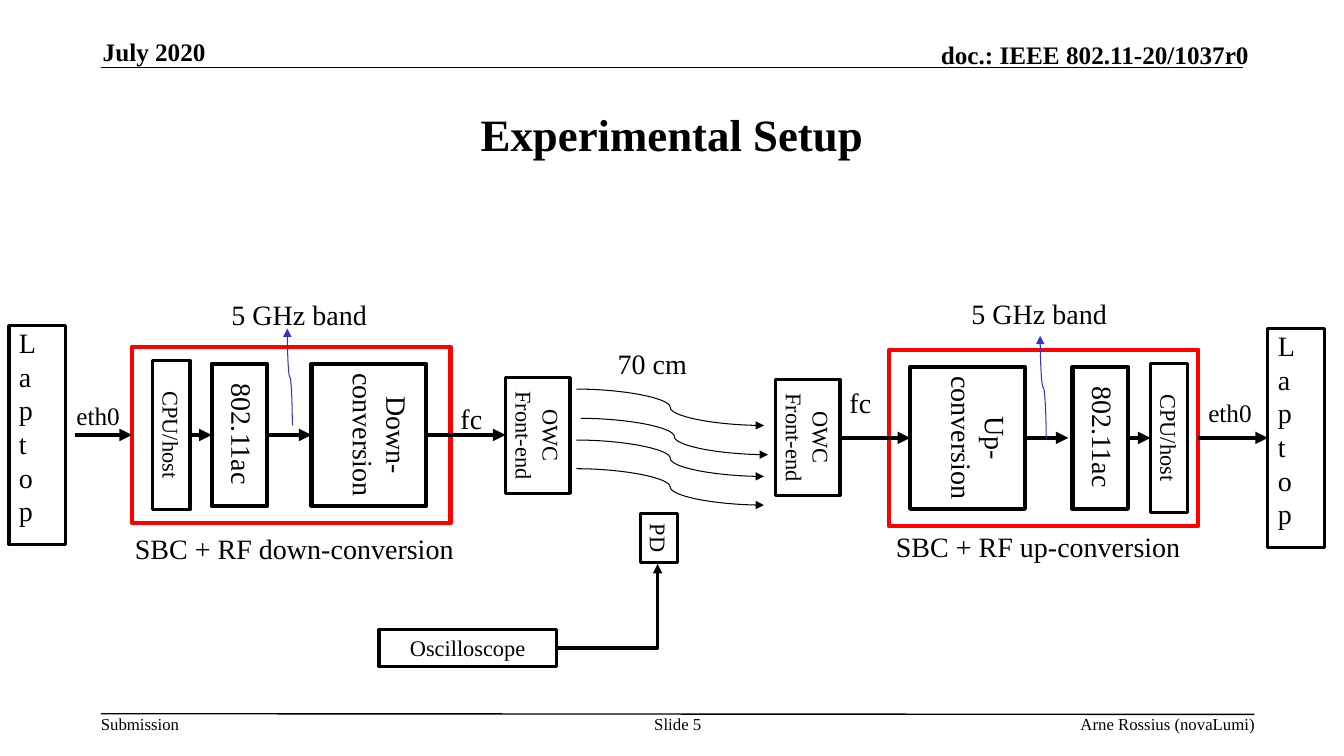
from dataclasses import dataclass

from lxml import etree
from pptx import Presentation
from pptx.dml.color import RGBColor
from pptx.enum.shapes import MSO_CONNECTOR as Route, MSO_SHAPE
from pptx.enum.text import MSO_ANCHOR as Anchor, MSO_AUTO_SIZE as AutoSize, PP_ALIGN as Align
from pptx.oxml.ns import qn
from pptx.util import Pt

BLACK = RGBColor(0x00, 0x00, 0x00)
RED = RGBColor(0xFF, 0x00, 0x00)
BLUE = RGBColor(0x33, 0x33, 0xCC)
FONT = "Times New Roman"


@dataclass
class Station:
    """Offsets of one station's parts from the corner of its red frame."""
    width: float
    laptop: float
    cpu: float
    radio: float
    converter: float
    front_end: tuple
    converter_text: str
    caption: tuple
    band: tuple
    ethernet: tuple
    carrier: tuple
    arrows: tuple
    pointer: tuple


DOWN = Station(
    width=227.5, laptop=-87.8, cpu=14.8, radio=56.9, converter=128.2, front_end=(266.8, 22),
    converter_text="Down-\nconversion",
    caption=("SBC + RF down-conversion", -5, 128.2, 244),
    band=(64, -38.9), ethernet=(-46.8, 34.6), carrier=(227.5, 35.3),
    arrows=((-41, 0), (41.4, 56.9), (96.5, 128.2), (210.2, 266.8)),
    pointer=(114.5, 56.2, 110.9, -13))
UP = Station(
    width=221, laptop=270.7, cpu=186.8, radio=131, converter=15.1, front_end=(-81, 21.2),
    converter_text="Up-\nconversion",
    caption=("SBC + RF up-conversion", -2.2, 124.6, 219.6),
    band=(51.8, -41.8), ethernet=(221, 30.2), carrier=(-35.3, 22.3),
    arrows=((-34.6, 15.1), (97.2, 128.2), (170.6, 186.8), (221, 270.7)),
    pointer=(112.3, 64, 108, -10))


def write(shape, text, size=20, bold=False, align=Align.LEFT, anchor=Anchor.TOP,
          wrap=False, grow=True, margins=(7.2, 3.6)):
    frame = shape.text_frame
    frame.text = text
    frame.word_wrap = wrap
    frame.auto_size = AutoSize.SHAPE_TO_FIT_TEXT if grow else AutoSize.NONE
    frame.vertical_anchor = anchor
    frame.margin_left = frame.margin_right = Pt(margins[0])
    frame.margin_top = frame.margin_bottom = Pt(margins[1])
    for paragraph in frame.paragraphs:
        paragraph.alignment = align
        for run in paragraph.runs:
            run.font.name = FONT
            run.font.size = Pt(size)
            run.font.bold = bold
            run.font.color.rgb = BLACK


def label(slide, text, left, top, width, height, **text_format):
    shape = slide.shapes.add_textbox(Pt(left), Pt(top), Pt(width), Pt(height))
    write(shape, text, **text_format)
    return shape


def box(slide, left, top, width, height, color=BLACK, weight=3.0):
    shape = slide.shapes.add_shape(MSO_SHAPE.RECTANGLE, Pt(left), Pt(top), Pt(width), Pt(height))
    shape.shadow.inherit = False
    shape.fill.background()
    shape.line.color.rgb = color
    shape.line.width = Pt(weight)
    return shape


def turned(center_x, center_y, length, depth):
    """Give left, top, width and height of a box to be turned about its centre."""
    return center_x - length / 2, center_y - depth / 2, length, depth


def turned_box(slide, text, left, top, width, height, wrap=False):
    """Draw a box that reads downwards and fills the given area."""
    shape = box(slide, *turned(left + width / 2, top + height / 2, height, width), weight=2.25)
    shape.rotation = 90
    write(shape, text, size=16, align=Align.CENTER, wrap=wrap)


def turned_label(slide, text, center_x, center_y, length, depth, align=Align.LEFT):
    shape = label(slide, text, *turned(center_x, center_y, length, depth), align=align)
    shape.rotation = 90


def line(slide, x1, y1, x2, y2, color=BLACK, weight=3.0, route=Route.STRAIGHT, arrow=True):
    connector = slide.shapes.add_connector(route, Pt(x1), Pt(y1), Pt(x2), Pt(y2))
    connector.line.color.rgb = color
    connector.line.width = Pt(weight)
    if arrow:
        etree.SubElement(connector.line._get_or_add_ln(), qn("a:tailEnd"), type="triangle")
    etree.SubElement(connector._element.spPr, qn("a:effectLst"))
    return connector


def rising_curve(slide, x1, y1, x2, y2):
    """Draw an S-curve that leaves and arrives vertically."""
    center_x, center_y = (x1 + x2) / 2, (y1 + y2) / 2
    half_length, half_depth = (y1 - y2) / 2, (x1 - x2) / 2
    connector = line(slide, center_x - half_length, center_y + half_depth,
                     center_x + half_length, center_y - half_depth,
                     color=BLUE, weight=0.75, route=Route.CURVE)
    connector._element.spPr.find(qn("a:xfrm")).set("rot", str(270 * 60000))


def header(slide, left, top, width):
    line(slide, left, top + 22.3, left + width, top + 22.3, weight=1, arrow=False)
    heading = dict(size=18, bold=True, anchor=Anchor.BOTTOM, wrap=True, grow=False, margins=(0, 0))
    label(slide, "July 2020", left + 1.4, top, 196.6, 21.6, **heading)
    label(slide, "doc.: IEEE 802.11-20/1037r0", left + 452.9, top + 2.2, 367.2, 21.6,
          align=Align.RIGHT, **heading)


def footer(slide, left, top, width):
    line(slide, left, top, left + width, top + 0.5, weight=1, arrow=False)
    parts = (("Submission", 0, 57, Align.LEFT), ("Slide 5", 384.5, 55.4, Align.CENTER),
             ("Arne Rossius (novaLumi)", 490, 334.4, Align.RIGHT))
    for text, offset, part_width, align in parts:
        label(slide, text, left + offset, top, part_width, 14.4, size=12, align=align,
              wrap=True, grow=False, margins=(0, 0))


def station(slide, left, top, parts):
    box(slide, left, top, parts.width, 126, color=RED)
    for offset, width in ((parts.radio, 39.6), (parts.converter, 82)):
        box(slide, left + offset, top + 12.2, width, 101.5)
    turned_label(slide, "802.11ac", left + parts.radio + 21.8, top + 63, 87.1, 31.7)
    turned_label(slide, parts.converter_text, left + parts.converter + 49.3, top + 63,
                 103, 55.4, align=Align.CENTER)
    turned_box(slide, "CPU/host", left + parts.cpu, top + 9.7, 26.6, 106.6, wrap=True)
    front_x, front_y = parts.front_end
    turned_box(slide, "OWC\vFront-end", left + front_x, top + front_y, 46, 82.8)

    laptop = box(slide, left + parts.laptop, top - 15.1, 40.3, 156.2, weight=2.25)
    write(laptop, "Laptop", margins=(7.2, 0))
    laptop.text_frame._txBody.bodyPr.set("vert", "wordArtVert")

    for start, end in parts.arrows:
        line(slide, left + start, top + 63, left + end, top + 63)
    x1, y1, x2, y2 = parts.pointer
    rising_curve(slide, left + x1, top + y1, left + x2, top + y2)

    caption, caption_x, caption_y, caption_width = parts.caption
    texts = ((caption, caption_x, caption_y, caption_width, 31.7, 20),
             ("5 GHz band", *parts.band, 112.3, 31.7, 20),
             ("eth0", *parts.ethernet, 46, 28.8, 18),
             ("fc", *parts.carrier, 30.2, 31.7, 20))
    for text, x, y, width, height, size in texts:
        label(slide, text, left + x, top + y, width, height, size=size)


def optical_link(slide, left, top):
    label(slide, "70 cm", left + 22.3, top - 33.8, 64, 31.7)
    for x, y in ((0, 0), (2.9, 20.9), (0, 36.4), (0, 56.9)):
        line(slide, left + x, top + y, left + x + 133.9, top + y + 26,
             weight=0.75, route=Route.CURVE)


def monitor(slide, left, top):
    """Draw the oscilloscope and the photodiode that feeds it."""
    write(box(slide, left, top, 126.7, 26.6, weight=2.25), "Oscilloscope",
          size=16, align=Align.CENTER, wrap=True)
    turned_box(slide, "PD", left + 186.5, top - 82.8, 26.6, 35.3)
    elbow = line(slide, left + 126.7, top + 13.3, left + 199.1, top - 46.8,
                 weight=2.25, route=Route.ELBOW)
    elbow._element.spPr.find(qn("a:prstGeom")).set("prst", "bentConnector2")


def main():
    presentation = Presentation()
    presentation.slide_width, presentation.slide_height = Pt(960), Pt(540)
    slide = presentation.slides.add_slide(presentation.slide_layouts[6])
    header(slide, 72, 25.9, 816)
    label(slide, "Experimental Setup", 72, 54, 816, 83.5, size=32, bold=True,
          align=Align.CENTER, anchor=Anchor.MIDDLE, wrap=True, grow=False)
    station(slide, 94.3, 249.5 - 1.8, DOWN)
    optical_link(slide, 411.8, 277.9)
    monitor(slide, 270.7, 449.6)
    station(slide, 635, 249.8, UP)
    footer(slide, 72, 509.8, 824)
    presentation.save("out.pptx")


if __name__ == "__main__":
    main()
